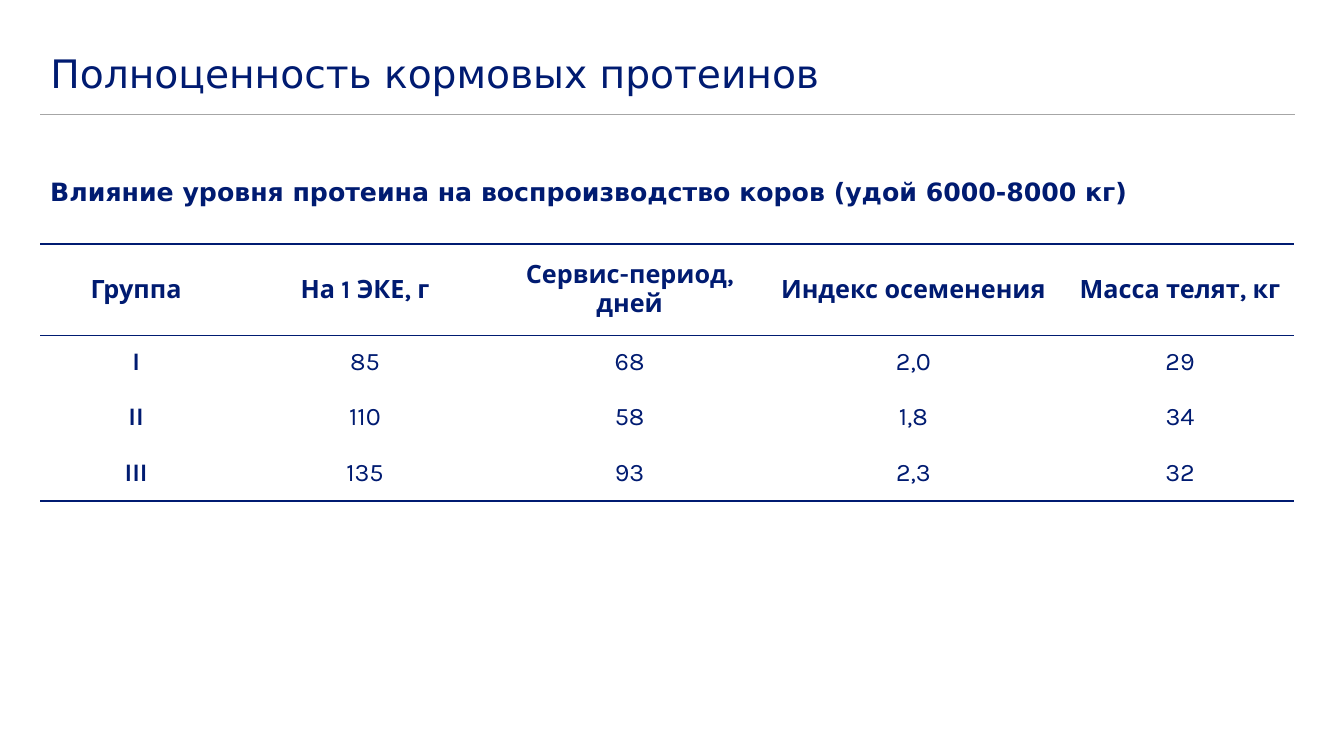
from lxml.etree import SubElement
from pptx import Presentation
from pptx.dml.color import RGBColor
from pptx.enum.shapes import MSO_CONNECTOR, MSO_SHAPE
from pptx.enum.text import MSO_ANCHOR, PP_ALIGN
from pptx.oxml.ns import qn
from pptx.util import Inches, Pt

NAVY = RGBColor(0x00, 0x1B, 0x71)
GREY = RGBColor(0xA6, 0xA6, 0xA6)
WHITE = RGBColor(0xFF, 0xFF, 0xFF)
HEADING_FONT, TABLE_FONT = "DejaVu Sans", "Karla"
LEFT, WIDTH = 0.4, 12.44

COL_WIDTHS = [1.9, 2.64, 2.61, 3.02, 2.27]
ROW_HEIGHTS = [0.91, 0.53, 0.55, 0.56]
ROWS = [
    ["Группа", "На 1 ЭКЕ, г", "Сервис-период, дней", "Индекс осеменения", "Масса телят, кг"],
    ["I", "85", "68", "2,0", "29"],
    ["II", "110", "58", "1,8", "34"],
    ["III", "135", "93", "2,3", "32"],
]
RULED_EDGES = {0, 1, len(ROWS)}  # above the header, below it, below the last row


def add_run(p, text, size, font, bold=False):
    r = p.add_run()
    r.text = text
    r.font.size = Pt(size)
    r.font.name = font
    r.font.bold = bold
    r.font.color.rgb = NAVY


def fill_heading(sp, text, size, anchor, bold=False):
    tf = sp.text_frame
    tf.word_wrap = True
    tf.vertical_anchor = anchor
    p = tf.paragraphs[0]
    p.alignment = PP_ALIGN.LEFT
    p.line_spacing = 0.9
    add_run(p, text, size, HEADING_FONT, bold)


def set_title(s, text, top, height):
    sp = s.shapes.title
    sp.left, sp.top = Inches(LEFT), Inches(top)
    sp.width, sp.height = Inches(WIDTH), Inches(height)
    fill_heading(sp, text, 28, MSO_ANCHOR.MIDDLE)


def add_table_heading(s, text, top, height):
    sp = s.shapes.add_shape(
        MSO_SHAPE.RECTANGLE, Inches(LEFT), Inches(top), Inches(WIDTH), Inches(height))
    sp.shadow.inherit = False
    sp.fill.solid()
    sp.fill.fore_color.rgb = WHITE
    sp.line.fill.background()
    fill_heading(sp, text, 18, MSO_ANCHOR.TOP, bold=True)


def add_rule(s, y):
    line = s.shapes.add_connector(
        MSO_CONNECTOR.STRAIGHT, Inches(LEFT), Inches(y), Inches(LEFT + WIDTH), Inches(y))
    line.line.color.rgb = GREY
    line.line.width = Pt(0.75)
    SubElement(line._element.spPr, qn("a:effectLst"))


def set_borders(cell, row):
    tcPr = cell._tc.get_or_add_tcPr()
    ruled = {"lnT": row in RULED_EDGES, "lnB": row + 1 in RULED_EDGES}
    for side in ("lnL", "lnR", "lnT", "lnB"):
        ln = SubElement(tcPr, qn(f"a:{side}"), w=str(Pt(1)))
        if ruled.get(side):
            fill = SubElement(ln, qn("a:solidFill"))
            SubElement(fill, qn("a:srgbClr"), val=str(NAVY))
        else:
            SubElement(ln, qn("a:noFill"))


def add_data_table(s, top):
    frame = s.shapes.add_table(
        len(ROWS), len(COL_WIDTHS), Inches(LEFT), Inches(top),
        Inches(WIDTH), Inches(sum(ROW_HEIGHTS)))
    table = frame.table
    table.first_row = table.horz_banding = False
    for column, width in zip(table.columns, COL_WIDTHS):
        column.width = Inches(width)
    for i, (height, values) in enumerate(zip(ROW_HEIGHTS, ROWS)):
        table.rows[i].height = Inches(height)
        for j, value in enumerate(values):
            cell = table.cell(i, j)
            set_borders(cell, i)
            cell.fill.background()
            cell.vertical_anchor = MSO_ANCHOR.MIDDLE
            p = cell.text_frame.paragraphs[0]
            p.alignment = PP_ALIGN.CENTER
            add_run(p, value, 18, TABLE_FONT, bold=i == 0 or j == 0)


def main():
    prs = Presentation()
    prs.slide_width, prs.slide_height = Inches(13.33), Inches(7.5)
    s = prs.slides.add_slide(prs.slide_layouts[5])
    s.background.fill.solid()
    s.background.fill.fore_color.rgb = WHITE

    # Title and the rule below it
    set_title(s, "Полноценность кормовых протеинов", 0.45, 0.6)
    add_rule(s, 1.14)

    # Table heading
    add_table_heading(
        s, "Влияние уровня протеина на воспроизводство коров (удой 6000-8000 кг)", 1.73, 0.41)

    # Data by group
    add_data_table(s, 2.42)

    prs.save("out.pptx")


if __name__ == "__main__":
    main()
